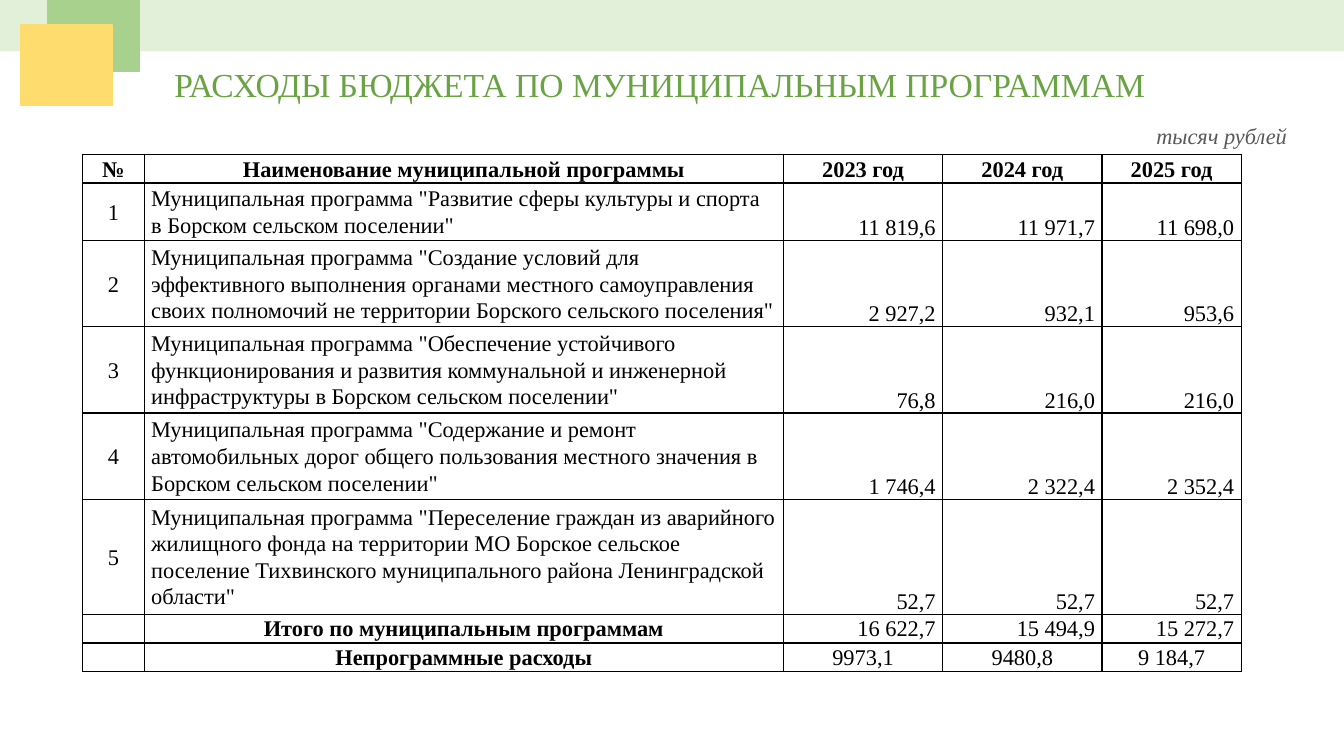
import pptx
import pptx.util
import pptx.dml.color
import pptx.enum.shapes
import pptx.enum.text
import pptx.oxml
import pptx.oxml.ns

Inches = pptx.util.Inches
Pt = pptx.util.Pt
RGBColor = pptx.dml.color.RGBColor
ALIGN = pptx.enum.text.PP_ALIGN
ANCHOR = pptx.enum.text.MSO_ANCHOR

FONT = "Times New Roman"
TITLE_GREEN = RGBColor(0x6A, 0xA3, 0x43)
PALE_GREEN = RGBColor(0xE2, 0xF0, 0xD9)
GREEN = RGBColor(0xA9, 0xD1, 0x8E)
YELLOW = RGBColor(0xFF, 0xDC, 0x6D)
GRAY = RGBColor(0x59, 0x59, 0x59)
BLACK = RGBColor(0, 0, 0)


def format_paragraph(paragraph, size, color, alignment, bold=False, italic=False):
    paragraph.alignment = alignment
    font = paragraph.font
    font.name = FONT
    font.size = Pt(size)
    font.color.rgb = color
    font.bold = bold
    font.italic = italic


def add_borders(cell):
    properties = cell._tc.get_or_add_tcPr()
    for side in ("lnL", "lnR", "lnT", "lnB"):
        properties.append(pptx.oxml.parse_xml(
            f'<a:{side} {pptx.oxml.ns.nsdecls("a")} w="{Pt(1)}">'
            f'<a:solidFill><a:srgbClr val="{BLACK}"/></a:solidFill></a:{side}>'))


presentation = pptx.Presentation()
presentation.slide_width = Inches(13.33)
presentation.slide_height = Inches(7.5)
slide = presentation.slides.add_slide(presentation.slide_layouts[5])

title = slide.shapes.title
title.left, title.top = Inches(1.63), Inches(0.58)
title.width, title.height = Inches(9.93), Inches(0.5)
title.text_frame.text = "РАСХОДЫ БЮДЖЕТА ПО МУНИЦИПАЛЬНЫМ ПРОГРАММАМ"
title.text_frame.word_wrap = False
title.text_frame.vertical_anchor = ANCHOR.TOP
format_paragraph(title.text_frame.paragraphs[0], 24, TITLE_GREEN, ALIGN.LEFT)

units = slide.shapes.add_textbox(Inches(11.37), Inches(1.16), Inches(1.52), Inches(0.37))
units.text_frame.text = "тысяч рублей"
format_paragraph(units.text_frame.paragraphs[0], 16, GRAY, ALIGN.LEFT, italic=True)

for left, top, width, height, color in (
    (0, 0, 13.33, 0.5, PALE_GREEN),
    (0.47, 0, 0.91, 0.71, GREEN),
    (0.21, 0.25, 0.9, 0.8, YELLOW),
):
    shape = slide.shapes.add_shape(
        pptx.enum.shapes.MSO_SHAPE.RECTANGLE,
        Inches(left), Inches(top), Inches(width), Inches(height))
    shape.shadow.inherit = False
    shape.fill.solid()
    shape.fill.fore_color.rgb = color
    shape.line.color.rgb = color
    shape.line.width = Pt(1)

rows = [
    ("№", "Наименование муниципальной программы", "2023 год", "2024 год", "2025 год"),
    ("1", 'Муниципальная программа "Развитие сферы культуры и спорта '
     'в Борском сельском поселении"', "11 819,6", "11 971,7", "11 698,0"),
    ("2", 'Муниципальная программа "Создание условий для эффективного выполнения '
     'органами местного самоуправления своих полномочий не территории '
     'Борского сельского поселения"', "2 927,2", "932,1", "953,6"),
    ("3", 'Муниципальная программа "Обеспечение устойчивого функционирования и развития '
     'коммунальной и инженерной инфраструктуры в Борском сельском поселении"',
     "76,8", "216,0", "216,0"),
    ("4", 'Муниципальная программа "Содержание и ремонт автомобильных дорог общего '
     'пользования местного значения в Борском сельском поселении"',
     "1 746,4", "2 322,4", "2 352,4"),
    ("5", 'Муниципальная программа "Переселение граждан из аварийного жилищного фонда '
     'на территории МО Борское сельское поселение Тихвинского муниципального района '
     'Ленинградской области"', "52,7", "52,7", "52,7"),
    ("", "Итого по муниципальным программам", "16 622,7", "15 494,9", "15 272,7"),
    ("", "Непрограммные расходы", "9973,1", "9480,8", "9 184,7"),
]
column_widths = (0.61, 6.34, 1.58, 1.58, 1.38)
row_heights = (0.18, 0.53, 0.71, 0.71, 0.71, 0.89, 0.18, 0.18)
total_row, other_row = len(rows) - 2, len(rows) - 1

table = slide.shapes.add_table(
    len(rows), len(column_widths), Inches(0.82), Inches(1.53),
    Inches(sum(column_widths)), Inches(sum(row_heights))).table
table.first_row = False
table.horz_banding = False
for column, width in zip(table.columns, column_widths):
    column.width = Inches(width)

for row_index, (values, height) in enumerate(zip(rows, row_heights)):
    table.rows[row_index].height = Inches(height)
    is_program = 0 < row_index < total_row
    for column_index, value in enumerate(values):
        cell = table.cell(row_index, column_index)
        cell.margin_left = cell.margin_right = Inches(0.07)
        cell.margin_top = cell.margin_bottom = 0
        is_amount = column_index > 1
        cell.vertical_anchor = ANCHOR.BOTTOM if is_program and is_amount else ANCHOR.MIDDLE
        if is_amount and 0 < row_index < other_row:
            alignment = ALIGN.RIGHT
        elif is_program and column_index == 1:
            alignment = ALIGN.LEFT
        else:
            alignment = ALIGN.CENTER
        bold = row_index == 0 or (row_index >= total_row and column_index == 1)
        if value:
            cell.text = value
        paragraph = cell.text_frame.paragraphs[0]
        paragraph.line_spacing = 1.07
        format_paragraph(paragraph, 16, BLACK, alignment, bold)
        add_borders(cell)
        cell.fill.background()

presentation.save("out.pptx")
